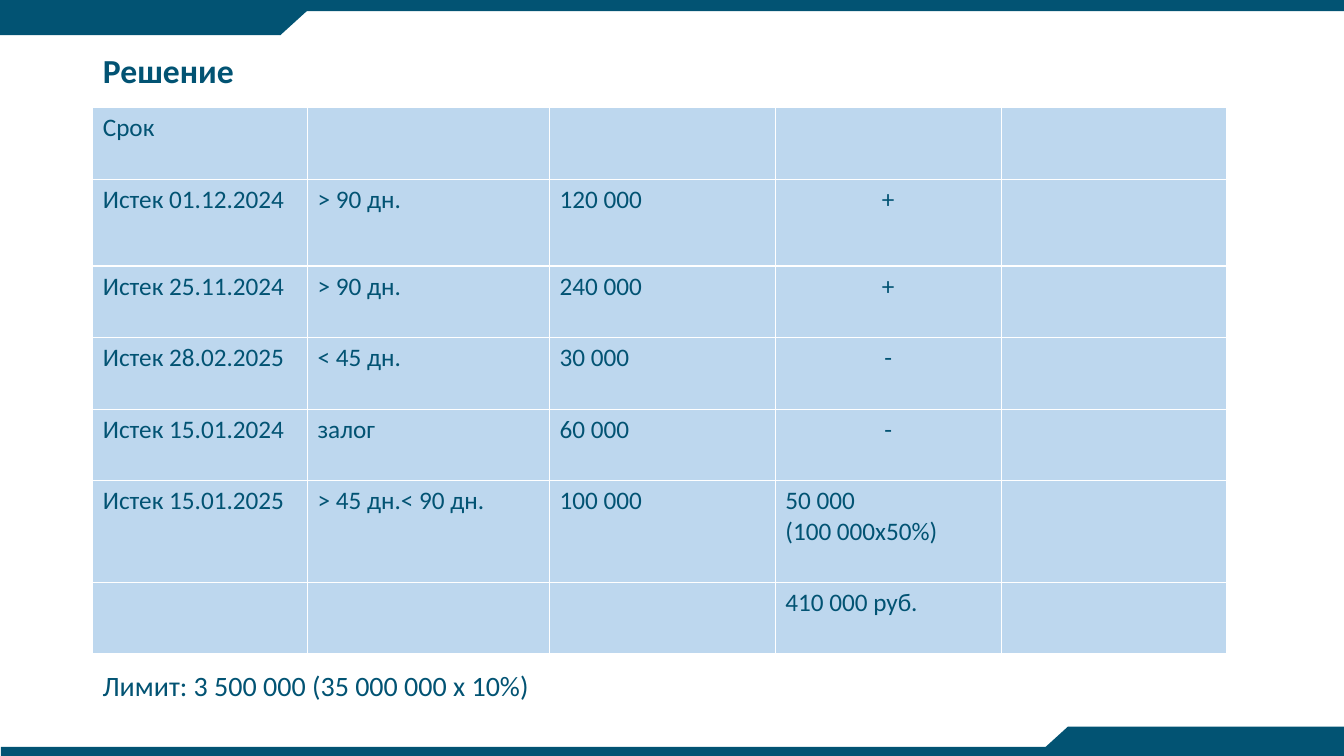
from pptx import Presentation
from pptx import util as u
from pptx.dml.color import RGBColor
from pptx.enum import shapes, text

COLORS = {"teal": "025373", "sky": "BDD7EE"}
MARGIN = 0.92
COLS = [2.13, 2.4, 2.24, 2.24, 2.24]
ROWS = [0.71, 0.86, 0.71, 0.71, 0.71, 1.01, 0.71]
CELLS = [
    ["Срок", "", "", "", ""],
    ["Истек 01.12.2024", "> 90 дн.", "120 000", "+", ""],
    ["Истек 25.11.2024", "> 90 дн.", "240 000", "+", ""],
    ["Истек 28.02.2025", "< 45 дн.", "30 000", "-", ""],
    ["Истек 15.01.2024", "залог", "60 000", "-", ""],
    ["Истек 15.01.2025", "> 45 дн.< 90 дн.", "100 000", "50 000\n(100 000x50%)", ""],
    ["", "", "", "410 000 руб.", ""],
]


def write(frame, words, size=18, bold=False, align=text.PP_ALIGN.LEFT, space=None):
    frame.text = words
    for par in frame.paragraphs:
        par.alignment = align
        par.line_spacing = space
        font = par.font
        font.name = "Calibri"
        font.size = u.Pt(size)
        font.bold = bold
        font.color.rgb = RGBColor.from_string(COLORS["teal"])


class Deck:
    def __init__(self):
        self.prs = Presentation()
        self.prs.slide_width = u.Inches(13.33)
        self.prs.slide_height = u.Inches(7.5)
        self.slide = self.prs.slides.add_slide(self.prs.slide_layouts[5])

    def shape(self, kind, left, top, width, height, turn=0):
        box = map(u.Inches, (left, top, width, height))
        shape = self.slide.shapes.add_shape(kind, *box)
        shape.shadow.inherit = False
        shape.fill.solid()
        shape.fill.fore_color.rgb = RGBColor.from_string(COLORS["teal"])
        shape.line.fill.background()
        shape.rotation = turn

    def title(self, words):
        title = self.slide.shapes.title
        title.left, title.top = u.Inches(MARGIN), u.Inches(0)
        title.width, title.height = u.Inches(11.5), u.Inches(1.45)
        title.text_frame.vertical_anchor = text.MSO_ANCHOR.MIDDLE
        write(title.text_frame, words, size=24, bold=True, space=0.9)

    def table(self, left, top, cols, rows, cells):
        box = map(u.Inches, (left, top, sum(cols), sum(rows)))
        table = self.slide.shapes.add_table(len(rows), len(cols), *box).table
        table.horz_banding = False
        for col, width in zip(table.columns, cols):
            col.width = u.Inches(width)
        for row, height, line in zip(table.rows, rows, cells):
            row.height = u.Inches(height)
            for cell, words in zip(row.cells, line):
                cell.fill.solid()
                cell.fill.fore_color.rgb = RGBColor.from_string(COLORS["sky"])
                sign = words in ("+", "-")
                align = text.PP_ALIGN.CENTER if sign else text.PP_ALIGN.LEFT
                write(cell.text_frame, words, align=align)

    def label(self, words, left, top, width, height, **style):
        box = map(u.Inches, (left, top, width, height))
        frame = self.slide.shapes.add_textbox(*box).text_frame
        frame.word_wrap = False
        frame.auto_size = text.MSO_AUTO_SIZE.SHAPE_TO_FIT_TEXT
        write(frame, words, **style)


def main():
    deck = Deck()
    rect = shapes.MSO_SHAPE.RECTANGLE
    merge = shapes.MSO_SHAPE.FLOWCHART_MERGE
    deck.shape(rect, 0, 0, 13.33, 0.11)
    deck.shape(rect, 0.01, 7.41, 13.33, 0.11)
    for bar, tip, top, turn in ((0, 2.45, 0.05, 0), (10.59, 10.26, 7.21, 180)):
        deck.shape(rect, bar, top, 2.78, 0.3)
        deck.shape(merge, tip, top, 0.66, 0.3, turn)
    deck.title("Решение")
    deck.table(MARGIN, 1.07, COLS, ROWS, CELLS)
    deck.label("Лимит: 3 500 000 (35 000 000 x 10%)", MARGIN, 6.58, 4.46, 0.44, size=20)
    deck.prs.save("out.pptx")


if __name__ == "__main__":
    main()
